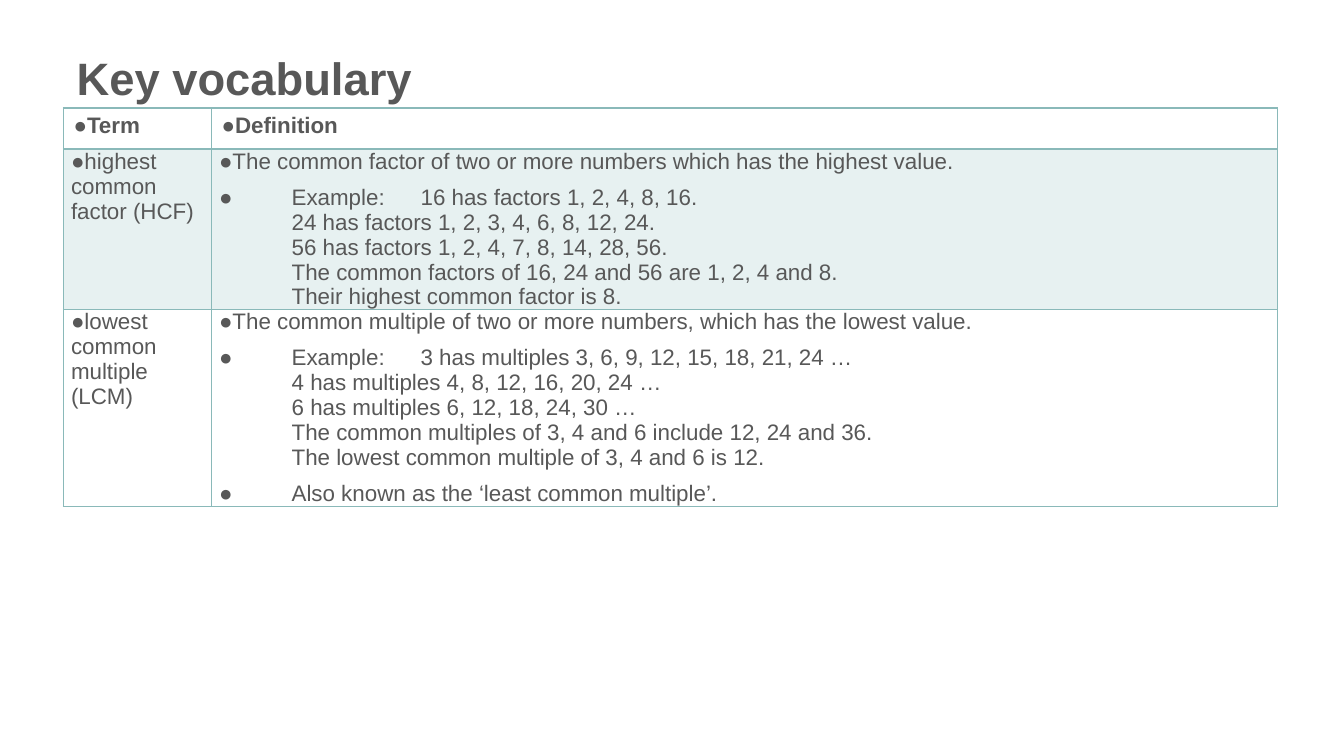
import copy

import pptx
import pptx.dml.color
import pptx.enum.text
import pptx.oxml
import pptx.oxml.ns
import pptx.util

Cm = pptx.util.Cm
Pt = pptx.util.Pt
qn = pptx.oxml.ns.qn
NS = pptx.oxml.ns.nsdecls("a")

GREY = "585858"
TEAL = "8AB9B9"
HANG = Cm(1.83)

HEADS = ["Term", "Definition"]
TERMS = [
    ("highest common factor (HCF)", [
        "The common factor of two or more numbers which has the highest value.",
        "Example:\t16 has factors 1, 2, 4, 8, 16.\v"
        "24 has factors 1, 2, 3, 4, 6, 8, 12, 24.\v"
        "56 has factors 1, 2, 4, 7, 8, 14, 28, 56.\v"
        "The common factors of 16, 24 and 56 are 1, 2, 4 and 8.\v"
        "Their highest common factor is 8.",
    ]),
    ("lowest common multiple (LCM)", [
        "The common multiple of two or more numbers, which has the lowest value.",
        "Example:\t3 has multiples 3, 6, 9, 12, 15, 18, 21, 24 …\v"
        "4 has multiples 4, 8, 12, 16, 20, 24 …\v"
        "6 has multiples 6, 12, 18, 24, 30 …\v"
        "The common multiples of 3, 4 and 6 include 12, 24 and 36.\v"
        "The lowest common multiple of 3, 4 and 6 is 12.",
        "Also known as the ‘least common multiple’.",
    ]),
]


def color(code):
    return pptx.dml.color.RGBColor.from_string(code)


def apply(item, values):
    for name, value in values.items():
        setattr(item, name, value)


def style(para, size, bold):
    """Format every run, and give line breaks the same size as the text."""
    for run in para.runs:
        apply(run.font, {"name": "Arial", "size": Pt(size), "bold": bold})
        run.font.color.rgb = color(GREY)
    for mark in para._p.findall(qn("a:br")):
        mark.insert(0, copy.deepcopy(para.runs[0]._r.rPr))


def bullet(para, hang):
    props = para._p.get_or_add_pPr()
    values = {"marL": hang, "indent": -hang, "defTabSz": Cm(2.54)}
    for name, value in values.items():
        props.set(name, str(int(value)))
    for part in (f'<a:buClr {NS}><a:srgbClr val="{GREY}"/></a:buClr>',
                 f'<a:buFont {NS} typeface="Arial"/>',
                 f'<a:buChar {NS} char="●"/>'):
        props.append(pptx.oxml.parse_xml(part))


def border(cell, widths):
    """Draw the left, right, top and bottom lines, with widths in points."""
    props = cell._tc.get_or_add_tcPr()
    for side, width in zip("LRTB", widths):
        props.append(pptx.oxml.parse_xml(
            f'<a:ln{side} {NS} w="{Pt(width)}"><a:solidFill>'
            f'<a:srgbClr val="{TEAL}"/></a:solidFill></a:ln{side}>'))


def tint(cell, code, alpha):
    cell.fill.solid()
    cell.fill.fore_color.rgb = color(code)
    shade = cell._tc.tcPr.find(qn("a:solidFill")).find(qn("a:srgbClr"))
    shade.append(pptx.oxml.parse_xml(f'<a:alpha {NS} val="{alpha * 1000}"/>'))


def write(cell, lines, bold=False):
    frame = cell.text_frame
    for spot, line in enumerate(lines):
        para = frame.paragraphs[0] if spot == 0 else frame.add_paragraph()
        para.text = line
        if not bold:
            para.space_after = Pt(4)
        if spot:
            para.space_before = Pt(4)
        bullet(para, HANG if spot else 0)
        style(para, 16, bold)


def head(slide, text):
    title = slide.shapes.title
    apply(title, {"left": Cm(1.68), "top": Cm(1.19),
                  "width": Cm(30.48), "height": Cm(2.72)})
    frame = title.text_frame
    apply(frame, {"text": text, "word_wrap": True,
                  "auto_size": pptx.enum.text.MSO_AUTO_SIZE.NONE,
                  "vertical_anchor": pptx.enum.text.MSO_ANCHOR.TOP,
                  "margin_left": Cm(0.25), "margin_top": Cm(0.22)})
    para = frame.paragraphs[0]
    apply(para, {"line_spacing": 0.9,
                 "alignment": pptx.enum.text.PP_ALIGN.LEFT})
    style(para, 32.4, True)


def grid(slide):
    wide, high = [3.73, 26.87], [1.04, 4.03, 4.96]
    table = slide.shapes.add_table(len(high), len(wide), Cm(1.6), Cm(2.72),
                                   Cm(sum(wide)), Cm(sum(high))).table
    table.horz_banding = False
    for col, width in zip(table.columns, wide):
        col.width = Cm(width)
    for row, height in zip(table.rows, high):
        row.height = Cm(height)

    for cell, text in zip(table.rows[0].cells, HEADS):
        border(cell, [1, 1, 1, 2])
        cell.fill.background()
        write(cell, [text], True)
    for spot, (term, lines) in enumerate(TERMS, 1):
        for cell, texts in zip(table.rows[spot].cells, ([term], lines)):
            apply(cell, {"margin_left": Cm(0.19), "margin_right": Cm(0.19),
                         "margin_top": 0, "margin_bottom": 0})
            border(cell, [1, 1, 2 if spot == 1 else 1, 1])
            if spot % 2:
                tint(cell, TEAL, 20)
            else:
                cell.fill.background()
            write(cell, texts)


def main():
    deck = pptx.Presentation()
    apply(deck, {"slide_width": Cm(33.87), "slide_height": Cm(19.05)})
    slide = deck.slides.add_slide(deck.slide_layouts[5])
    head(slide, "Key vocabulary")
    grid(slide)
    deck.save("out.pptx")


if __name__ == "__main__":
    main()
